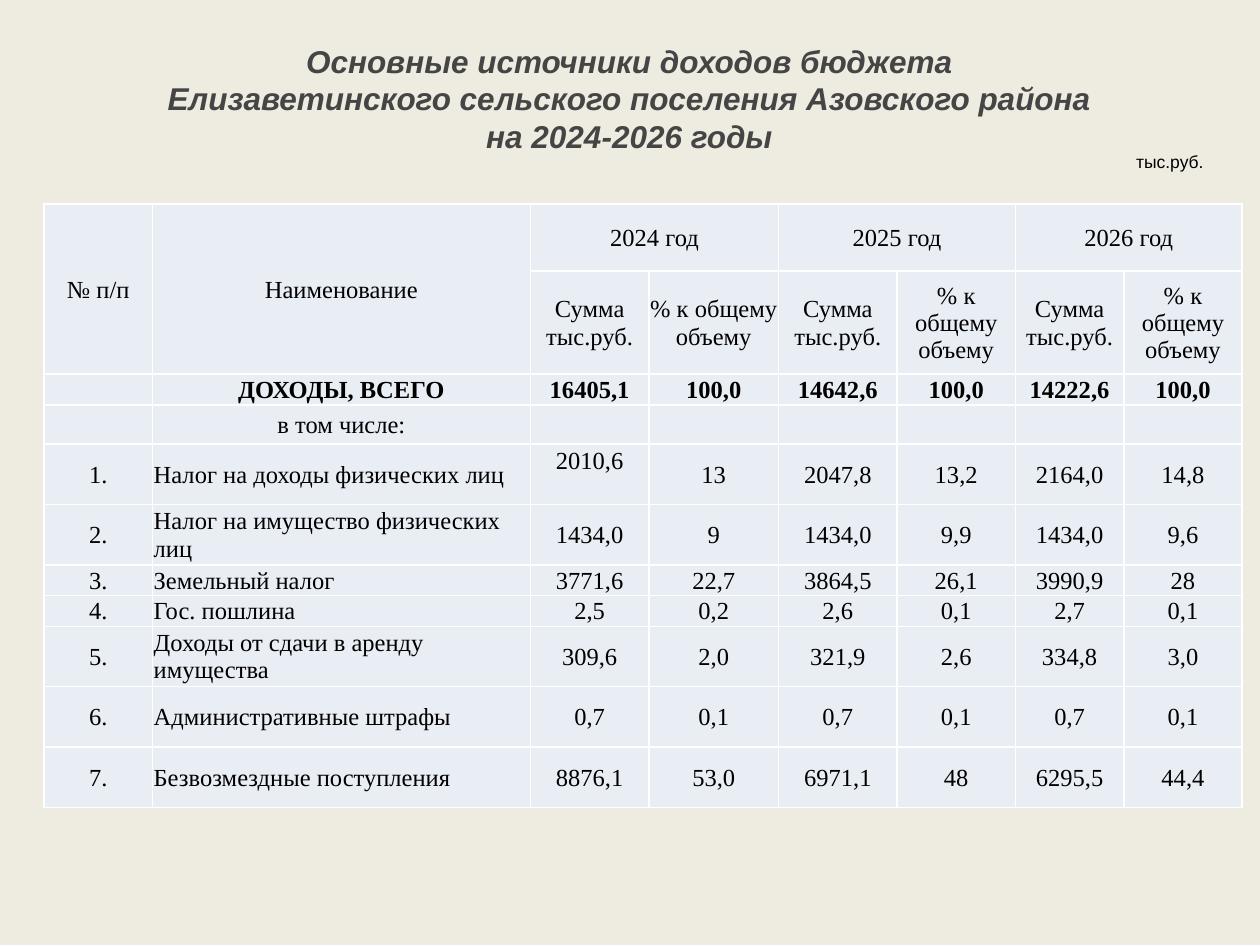
import pptx
import pptx.dml.color
import pptx.enum.text
import pptx.oxml.ns
import pptx.util
from lxml import etree

Inches, Pt = pptx.util.Inches, pptx.util.Pt
ALIGN = pptx.enum.text.PP_ALIGN
ANCHOR = pptx.enum.text.MSO_ANCHOR

COLORS = {"background": "EEECE1", "title": "454545", "text": "000000",
          "cell": "E9EDF4", "border": "FFFFFF"}

TITLE = ("Основные источники доходов бюджета Елизаветинского сельского "
         "поселения Азовского района на 2024-2026 годы")
UNIT = "тыс.руб."
LEAD_HEADERS = ["№ п/п", "Наименование"]
YEARS = ["2024 год", "2025 год", "2026 год"]
YEAR_HEADERS = ["Сумма тыс.руб.", "% к общему объему"]
INCOME = [
    ["", "ДОХОДЫ, ВСЕГО", "16405,1", "100,0", "14642,6", "100,0", "14222,6", "100,0"],
    ["", "в том числе:", "", "", "", "", "", ""],
    ["1.", "Налог на доходы физических лиц", "2010,6", "13", "2047,8", "13,2", "2164,0", "14,8"],
    ["2.", "Налог на имущество физических лиц", "1434,0", "9", "1434,0", "9,9", "1434,0", "9,6"],
    ["3.", "Земельный налог", "3771,6", "22,7", "3864,5", "26,1", "3990,9", "28"],
    ["4.", "Гос. пошлина", "2,5", "0,2", "2,6", "0,1", "2,7", "0,1"],
    ["5.", "Доходы от сдачи в аренду имущества", "309,6", "2,0", "321,9", "2,6", "334,8", "3,0"],
    ["6.", "Административные штрафы", "0,7", "0,1", "0,7", "0,1", "0,7", "0,1"],
    ["7.", "Безвозмездные поступления", "8876,1", "53,0", "6971,1", "48", "6295,5", "44,4"],
]
COLUMN_WIDTHS = [0.86, 3, 0.94, 1.03, 0.94, 0.94, 0.86, 0.94]
ROW_HEIGHTS = [0.53, 0.82, 0.24, 0.31, 0.48, 0.48, 0.24, 0.24, 0.48, 0.48, 0.48]
HEADER_ROWS = 2
TOTAL_ROW = HEADER_ROWS
RAISED_CELL = (4, 2)

TITLE_FONT = {"name": "Arial", "size": Pt(18), "bold": True, "italic": True}
UNIT_FONT = {"name": "Arial", "size": Pt(10)}
CELL_FONT = {"name": "Times New Roman", "size": Pt(14)}
CELL_FORMAT = {"vertical_anchor": ANCHOR.MIDDLE, "margin_left": Inches(0.01),
               "margin_right": Inches(0.01), "margin_top": Inches(0.01),
               "margin_bottom": 0}


def rgb(name):
    return pptx.dml.color.RGBColor.from_string(COLORS[name])


def apply(target, values):
    for name, value in values.items():
        setattr(target, name, value)


def write(paragraph, text, font, color, alignment):
    paragraph.alignment = alignment
    run = paragraph.add_run()
    run.text = text
    apply(run.font, font)
    run.font.color.rgb = rgb(color)


def add_borders(cell):
    """Put a 1 pt line on all four sides, ahead of the cell's fill."""
    properties = cell._tc.get_or_add_tcPr()
    qn = pptx.oxml.ns.qn
    for position, side in enumerate(("a:lnL", "a:lnR", "a:lnT", "a:lnB")):
        line = etree.Element(qn(side), w=str(Pt(1)))
        solid = etree.SubElement(line, qn("a:solidFill"))
        etree.SubElement(solid, qn("a:srgbClr"), val=COLORS["border"])
        properties.insert(position, line)


def fill_cell(cell, text, alignment, bold):
    apply(cell, CELL_FORMAT)
    cell.fill.solid()
    cell.fill.fore_color.rgb = rgb("cell")
    add_borders(cell)
    paragraph = cell.text_frame.paragraphs[0]
    if text:
        write(paragraph, text, {**CELL_FONT, "bold": bold}, "text", alignment)
    else:
        # Keeps an empty cell from stretching its row
        etree.SubElement(paragraph._p, pptx.oxml.ns.qn("a:endParaRPr"), sz="1400")


def add_income_table(slide):
    year_row = ["", ""]
    for year in YEARS:
        year_row += [year, ""]
    rows = [LEAD_HEADERS + year_row[2:], ["", ""] + YEAR_HEADERS * len(YEARS)] + INCOME
    table = slide.shapes.add_table(
        len(rows), len(COLUMN_WIDTHS), Inches(0.35), Inches(1.62),
        Inches(sum(COLUMN_WIDTHS)), Inches(sum(ROW_HEIGHTS))).table
    table.first_row = table.horz_banding = False
    for column, width in zip(table.columns, COLUMN_WIDTHS):
        column.width = Inches(width)
    for row, height in zip(table.rows, ROW_HEIGHTS):
        row.height = Inches(height)

    for r, texts in enumerate(rows):
        for c, text in enumerate(texts):
            is_source = c == 1 and r > TOTAL_ROW + 1
            fill_cell(table.cell(r, c), text,
                      ALIGN.LEFT if is_source else ALIGN.CENTER, r == TOTAL_ROW)
    table.cell(*RAISED_CELL).margin_bottom = Inches(0.22)

    for c in range(len(LEAD_HEADERS)):
        table.cell(0, c).merge(table.cell(1, c))
    for c in range(len(LEAD_HEADERS), len(COLUMN_WIDTHS), len(YEAR_HEADERS)):
        table.cell(0, c).merge(table.cell(0, c + 1))


def main():
    deck = pptx.Presentation()
    deck.slide_width, deck.slide_height = Inches(10), Inches(7.5)
    slide = deck.slides.add_slide(deck.slide_layouts[5])
    slide.background.fill.solid()
    slide.background.fill.fore_color.rgb = rgb("background")

    title = slide.shapes.title
    apply(title, {"left": Inches(1.21), "top": Inches(0.28),
                  "width": Inches(7.57), "height": Inches(1.25)})
    apply(title.text_frame, {"vertical_anchor": ANCHOR.TOP, "word_wrap": True,
                             "auto_size": pptx.enum.text.MSO_AUTO_SIZE.NONE})
    write(title.text_frame.paragraphs[0], TITLE, TITLE_FONT, "title", ALIGN.CENTER)

    unit = slide.shapes.add_textbox(Inches(7.92), Inches(1.15), Inches(1.73), Inches(0.27))
    unit.text_frame.word_wrap = True
    write(unit.text_frame.paragraphs[0], UNIT, UNIT_FONT, "text", ALIGN.RIGHT)

    add_income_table(slide)
    deck.save("out.pptx")


if __name__ == "__main__":
    main()
